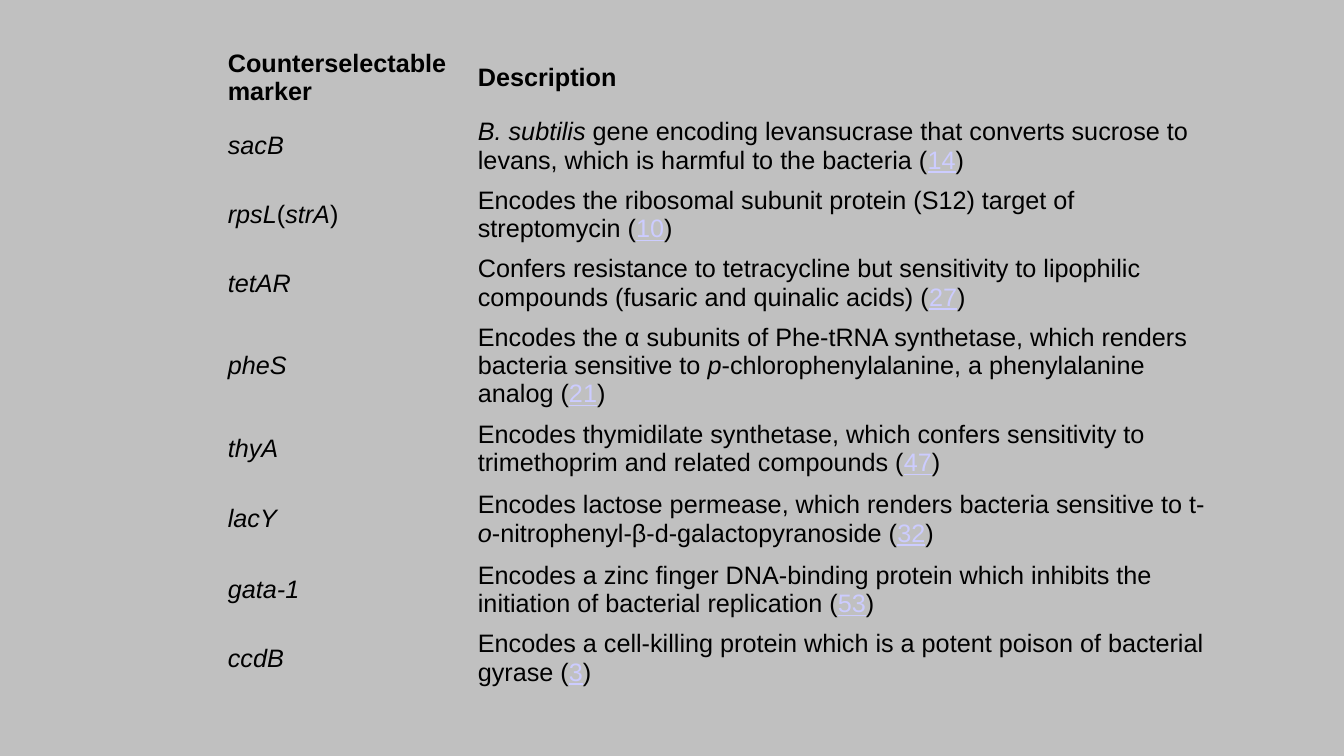
import pptx
import pptx.util
import pptx.dml.color
import pptx.enum.text

Inches = pptx.util.Inches

# Content: marker, description, reference number; *asterisks* enclose italics
HEADINGS = ("Counterselectable marker", "Description")
MARKERS = [
    ("*sacB*", "*B. subtilis* gene encoding levansucrase that converts sucrose to levans, "
     "which is harmful to the bacteria", "14"),
    ("*rpsL*(*strA*)", "Encodes the ribosomal subunit protein (S12) target of streptomycin", "10"),
    ("*tetAR*", "Confers resistance to tetracycline but sensitivity to lipophilic compounds "
     "(fusaric and quinalic acids)", "27"),
    ("*pheS*", "Encodes the α subunits of Phe-tRNA synthetase, which renders bacteria "
     "sensitive to *p*-chlorophenylalanine, a phenylalanine analog", "21"),
    ("*thyA*", "Encodes thymidilate synthetase, which confers sensitivity to trimethoprim "
     "and related compounds", "47"),
    ("*lacY*", "Encodes lactose permease, which renders bacteria sensitive to "
     "t-*o*-nitrophenyl-β-d-galactopyranoside", "32"),
    ("*gata-1*", "Encodes a zinc finger DNA-binding protein which inhibits the initiation "
     "of bacterial replication", "53"),
    ("*ccdB*", "Encodes a cell-killing protein which is a potent poison of bacterial gyrase", "3"),
]

COLORS = {"background": "C0C0C0", "text": "000000", "reference": "CCCCFF"}
COLUMN_WIDTHS = (2.48, 7.44)
ROW_HEIGHTS = (0.34, 0.7, 0.4, 0.7, 0.7, 0.7, 0.7, 0.7, 0.4)  # minimums; rows grow with text
LEFT, TOP, WIDTH, HEIGHT = (Inches(n) for n in (2.16, 0.44, 9.92, 6.61))
PLAIN_STYLE = "{2D5ABB26-0587-4C30-8999-92F81FD0307C}"  # no style, no grid


def color(name):
    return pptx.dml.color.RGBColor.from_string(COLORS[name])


def add_span(para, text, color_name="text", **formats):
    span = para.add_run()
    span.text = text
    values = {"name": "Arial", "size": pptx.util.Pt(18), "bold": False, "italic": False}
    for key, value in {**values, **formats}.items():
        setattr(span.font, key, value)
    span.font.color.rgb = color(color_name)


def add_marked_text(para, text):
    for index, part in enumerate(text.split("*")):
        if part:
            add_span(para, part, italic=index % 2 == 1)


# Slide
deck = pptx.Presentation()
deck.slide_width, deck.slide_height = Inches(13.33), Inches(7.5)
page = deck.slides.add_slide(deck.slide_layouts[6])
page.background.fill.solid()
page.background.fill.fore_color.rgb = color("background")

# Plain table
frame = page.shapes.add_table(len(MARKERS) + 1, len(HEADINGS), LEFT, TOP, WIDTH, HEIGHT)
table = frame.table
table.first_row = table.horz_banding = False
table._tbl.tblPr[0].text = PLAIN_STYLE
for column, width in zip(table.columns, COLUMN_WIDTHS):
    column.width = Inches(width)
for row, height in zip(table.rows, ROW_HEIGHTS):
    row.height = Inches(height)
frame.height = HEIGHT
for cell in table.iter_cells():
    cell.fill.background()
    cell.vertical_anchor = pptx.enum.text.MSO_ANCHOR.MIDDLE

# Headings
for column, heading in enumerate(HEADINGS):
    add_span(table.cell(0, column).text_frame.paragraphs[0], heading, bold=True)

# Marker rows
for row, (marker, description, reference) in enumerate(MARKERS, start=1):
    name_para, para = (table.cell(row, column).text_frame.paragraphs[0] for column in (0, 1))
    add_marked_text(name_para, marker)
    add_marked_text(para, description + " (")
    add_span(para, reference, "reference", underline=True)
    add_span(para, ")")

deck.save("out.pptx")
